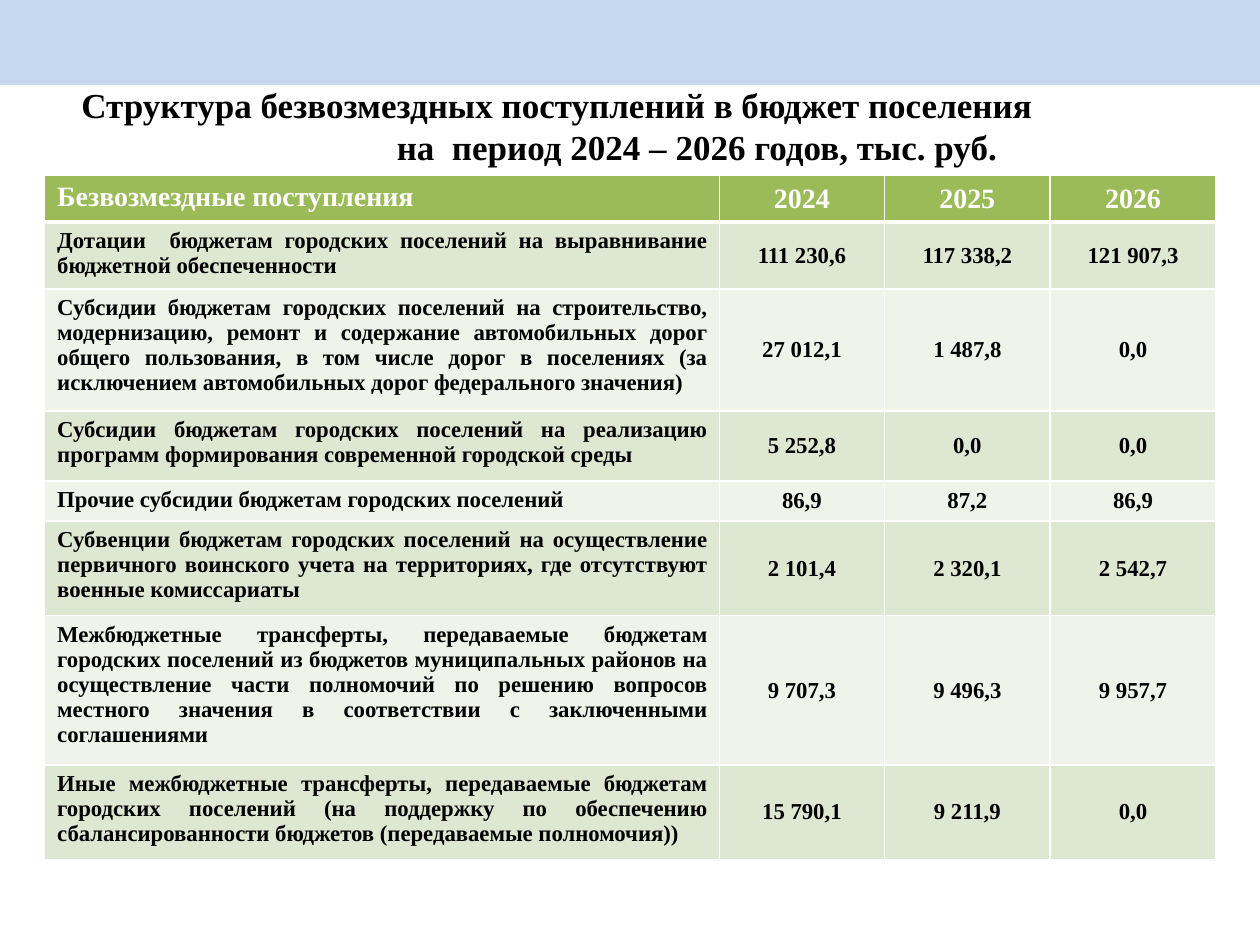
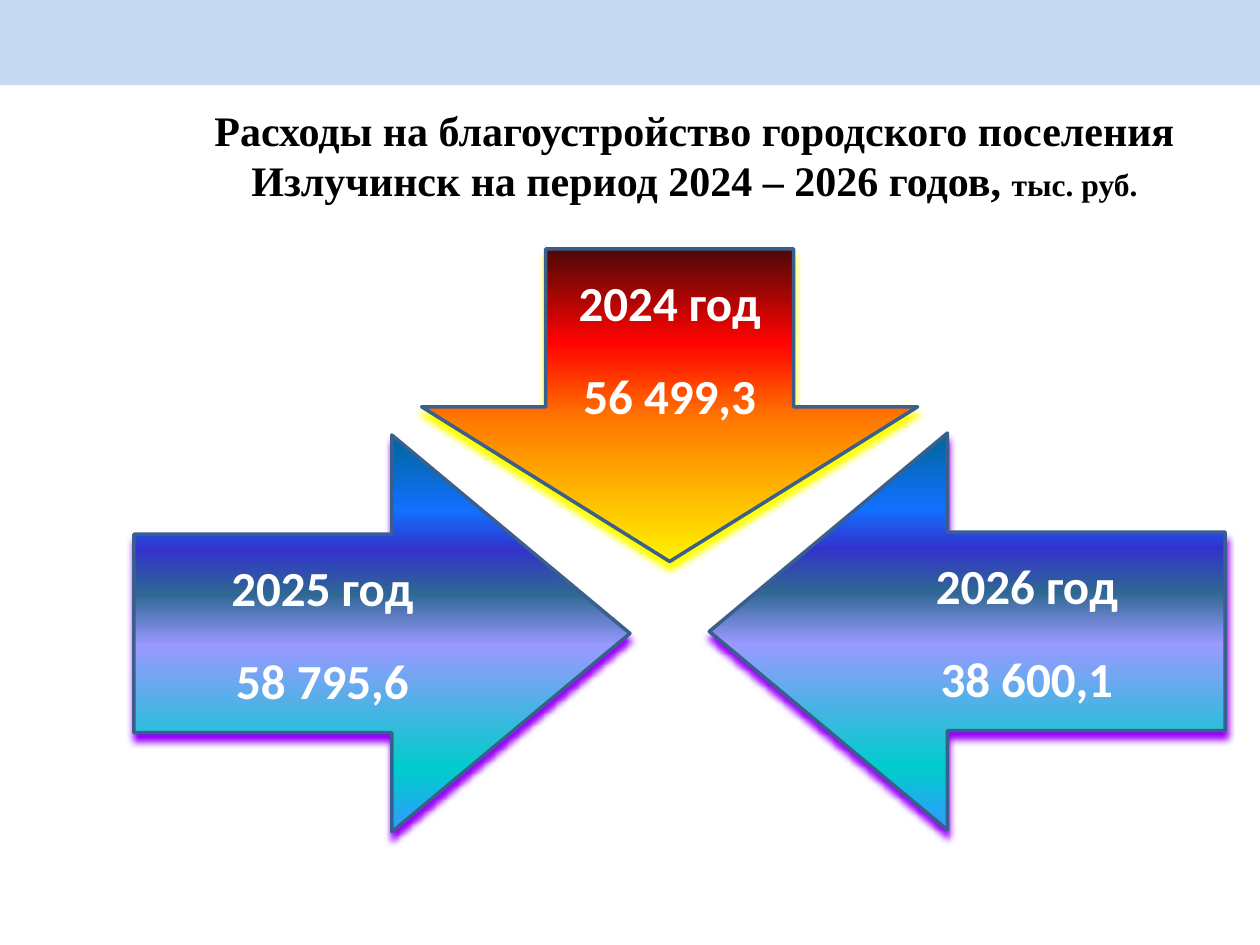
from lxml import etree
from pptx import Presentation
from pptx.dml.color import RGBColor
from pptx.enum.shapes import MSO_SHAPE
from pptx.enum.text import MSO_ANCHOR, PP_ALIGN
from pptx.oxml.ns import qn
from pptx.util import Cm, Pt

WHITE = RGBColor(0xFF, 0xFF, 0xFF)
BLACK = RGBColor(0x00, 0x00, 0x00)
BAND_BLUE = RGBColor(0xC6, 0xD9, 0xF1)
HEADER_GREEN = RGBColor(0x9B, 0xBB, 0x59)
ROW_GREENS = (RGBColor(0xDE, 0xE7, 0xD1), RGBColor(0xEF, 0xF3, 0xEA))
OUTLINE_BLUE = RGBColor(0x3A, 0x5F, 0x8C)
YELLOW = RGBColor(0xFF, 0xFF, 0x00)
VIOLET = RGBColor(0x99, 0x00, 0xFF)
FIRE = (
    (0, RGBColor(0xFF, 0xF2, 0x00)),
    (45, RGBColor(0xFF, 0x7A, 0x00)),
    (70, RGBColor(0xFF, 0x03, 0x00)),
    (100, RGBColor(0x4D, 0x08, 0x08)),
)
OCEAN = (
    (0, RGBColor(0x33, 0x99, 0xFF)),
    (16, RGBColor(0x00, 0xCC, 0xCC)),
    (47, RGBColor(0x99, 0x99, 0xFF)),
    (60, RGBColor(0x2E, 0x67, 0x92)),
    (71, RGBColor(0x33, 0x33, 0xCC)),
    (81, RGBColor(0x11, 0x70, 0xFF)),
    (100, RGBColor(0x00, 0x66, 0x99)),
)
SERIF, SANS = "Times New Roman", "Calibri"
SLIDE_WIDTH, SLIDE_HEIGHT = Cm(25.4), Cm(19.05)

COLUMN_WIDTHS = (13.6, 3.33, 3.34, 3.34)
ROW_HEIGHTS = (0.91, 1.27, 2.26, 1.41, 0.76, 1.75, 2.79, 1.75)
RECEIPTS = (
    ("Безвозмездные поступления", "2024", "2025", "2026"),
    ("Дотации  бюджетам городских поселений на выравнивание бюджетной обеспеченности",
     "111 230,6", "117 338,2", "121 907,3"),
    ("Субсидии бюджетам городских поселений на строительство, модернизацию, ремонт и "
     "содержание автомобильных дорог общего пользования, в том числе дорог в поселениях "
     "(за исключением автомобильных дорог федерального значения)",
     "27 012,1", "1 487,8", "0,0"),
    ("Субсидии бюджетам городских поселений на реализацию программ формирования "
     "современной городской среды", "5 252,8", "0,0", "0,0"),
    ("Прочие субсидии бюджетам городских поселений", "86,9", "87,2", "86,9"),
    ("Субвенции бюджетам городских поселений на осуществление первичного воинского учета "
     "на территориях, где отсутствуют военные комиссариаты",
     "2 101,4", "2 320,1", "2 542,7"),
    ("Межбюджетные трансферты, передаваемые бюджетам городских поселений из бюджетов "
     "муниципальных районов на осуществление части полномочий по решению вопросов "
     "местного значения в соответствии с заключенными соглашениями",
     "9 707,3", "9 496,3", "9 957,7"),
    ("Иные межбюджетные трансферты, передаваемые бюджетам городских поселений "
     "(на поддержку по обеспечению сбалансированности бюджетов (передаваемые полномочия))",
     "15 790,1", "9 211,9", "0,0"),
)


def style_run(run, size, color, font=SERIF):
    """Format a run in bold with the given size, colour and font."""
    run.font.name = font
    run.font.size = Pt(size)
    run.font.bold = True
    run.font.color.rgb = color


def add_banded_slide(deck):
    """Add a blank slide with the blue band across its top."""
    slide = deck.slides.add_slide(deck.slide_layouts[6])
    band = slide.shapes.add_shape(MSO_SHAPE.RECTANGLE, 0, 0, SLIDE_WIDTH, Cm(1.72))
    band.shadow.inherit = False
    band.fill.solid()
    band.fill.fore_color.rgb = BAND_BLUE
    band.line.fill.background()
    return slide


def add_title(slide, box, lines, align):
    """Add a title of paragraphs, each an indent with its sized runs."""
    frame = slide.shapes.add_textbox(*map(Cm, box)).text_frame
    frame.word_wrap = True
    frame.vertical_anchor = MSO_ANCHOR.MIDDLE
    for index, (indent, runs) in enumerate(lines):
        paragraph = frame.add_paragraph() if index else frame.paragraphs[0]
        paragraph.alignment = align
        if indent:
            paragraph._p.get_or_add_pPr().set("marL", str(Cm(indent)))
        for text, size in runs:
            run = paragraph.add_run()
            run.text = text
            style_run(run, size, BLACK)


def set_borders(cell, bottom):
    """Draw white cell borders, with the bottom one in its own width."""
    properties = cell._tc.get_or_add_tcPr()
    widths = (("lnL", 1), ("lnR", 1), ("lnT", 1), ("lnB", bottom))
    for position, (side, width) in enumerate(widths):
        line = etree.Element(qn(f"a:{side}"), w=str(Pt(width)))
        fill = etree.SubElement(line, qn("a:solidFill"))
        etree.SubElement(fill, qn("a:srgbClr"), val=str(WHITE))
        properties.insert(position, line)


def set_script_fonts(run, font):
    """Use one font for all scripts so that row heights follow it."""
    properties = run._r.get_or_add_rPr()
    for script in ("ea", "cs"):
        etree.SubElement(properties, qn(f"a:{script}"), typeface=font)


def fill_cell(cell, text, row, column):
    """Write and format one table cell by its row and column."""
    header = row == 0
    cell.fill.solid()
    cell.fill.fore_color.rgb = HEADER_GREEN if header else ROW_GREENS[(row - 1) % 2]
    set_borders(cell, 3 if header else 1)
    cell.text_frame.text = text
    paragraph = cell.text_frame.paragraphs[0]
    if column:
        cell.vertical_anchor = MSO_ANCHOR.MIDDLE
        paragraph.alignment = PP_ALIGN.CENTER
    else:
        paragraph.alignment = PP_ALIGN.LEFT if header else PP_ALIGN.JUSTIFY
    style_run(paragraph.runs[0], 16 if header else 13, WHITE if header else BLACK)
    set_script_fonts(paragraph.runs[0], SERIF)


def add_receipts_table(slide, left, top):
    """Add the table of receipts by year at the given corner."""
    table = slide.shapes.add_table(
        len(RECEIPTS), len(COLUMN_WIDTHS), Cm(left), Cm(top),
        Cm(sum(COLUMN_WIDTHS)), Cm(sum(ROW_HEIGHTS))).table
    for column, width in zip(table.columns, COLUMN_WIDTHS):
        column.width = Cm(width)
    for row, height in zip(table.rows, ROW_HEIGHTS):
        row.height = Cm(height)
    for row, texts in enumerate(RECEIPTS):
        for column, text in enumerate(texts):
            fill_cell(table.cell(row, column), text, row, column)


def set_gradient(shape, stops):
    """Fill a shape with a gradient running from bottom to top."""
    shape.fill.gradient()
    gradient = shape._element.spPr.find(qn("a:gradFill"))
    stop_list = gradient.find(qn("a:gsLst"))
    for old_stop in list(stop_list):
        stop_list.remove(old_stop)
    for percent, color in stops:
        stop = etree.SubElement(stop_list, qn("a:gs"), pos=str(percent * 1000))
        etree.SubElement(stop, qn("a:srgbClr"), val=str(color))
    gradient.find(qn("a:lin")).set("ang", str(270 * 60000))


def set_shadow(shape, color):
    """Cast a coloured shadow straight down."""
    shape.shadow.inherit = False
    effects = shape._element.spPr.find(qn("a:effectLst"))
    shadow = etree.SubElement(
        effects, qn("a:outerShdw"), blurRad=str(Pt(4)), dist=str(Pt(4)),
        dir=str(90 * 60000), algn="ctr", rotWithShape="0")
    etree.SubElement(shadow, qn("a:srgbClr"), val=str(color))


def add_year_arrow(slide, preset, box, head, stops, glow, year, amount, lift=0):
    """Add an arrow with a year over its amount, raised by a lower inset."""
    arrow = slide.shapes.add_shape(preset, *map(Cm, box))
    arrow.adjustments[0] = 0.5
    arrow.adjustments[1] = head
    set_gradient(arrow, stops)
    arrow.line.color.rgb = OUTLINE_BLUE
    arrow.line.width = Pt(2)
    set_shadow(arrow, glow)
    frame = arrow.text_frame
    frame.word_wrap = True
    frame.vertical_anchor = MSO_ANCHOR.MIDDLE
    frame.margin_bottom = Cm(0.13 + lift)
    frame.text = f"{year} год\n{amount}"
    for paragraph in frame.paragraphs:
        paragraph.alignment = PP_ALIGN.CENTER
        style_run(paragraph.runs[0], 28, WHITE, SANS)
    frame.paragraphs[1].space_before = Pt(19.5)


def build_receipts_slide(deck):
    """Build the slide on the structure of receipts."""
    slide = add_banded_slide(deck)
    add_title(slide, (1.39, 1.52, 24.13, 2.03), (
        (0, (("Структура безвозмездных поступлений в бюджет поселения", 20),)),
        (6.36, (("на  период 2024 – 2026 годов, тыс. руб.", 20),)),
    ), PP_ALIGN.LEFT)
    add_receipts_table(slide, 0.9, 3.54)


def build_spending_slide(deck):
    """Build the slide on improvement spending by year."""
    slide = add_banded_slide(deck)
    add_title(slide, (2.57, 1.93, 22.86, 2.39), (
        (0, (("Расходы на благоустройство городского поселения Излучинск "
              "на период 2024 – 2026 годов, ", 24), ("тыс. руб.", 18))),
    ), PP_ALIGN.CENTER)
    add_year_arrow(slide, MSO_SHAPE.DOWN_ARROW, (8.5, 5.02, 10, 6.3), 0.495,
                   FIRE, YELLOW, 2024, "56 499,3", lift=0.73)
    add_year_arrow(slide, MSO_SHAPE.RIGHT_ARROW, (2.7, 8.77, 10, 8), 0.6,
                   OCEAN, VIOLET, 2025, "58 795,6")
    add_year_arrow(slide, MSO_SHAPE.LEFT_ARROW, (14.3, 8.73, 10.4, 8), 0.6,
                   OCEAN, VIOLET, 2026, "38 600,1")


def main():
    """Build both slides and save the deck."""
    deck = Presentation()
    deck.slide_width, deck.slide_height = SLIDE_WIDTH, SLIDE_HEIGHT
    build_receipts_slide(deck)
    build_spending_slide(deck)
    deck.save("out.pptx")


if __name__ == "__main__":
    main()
